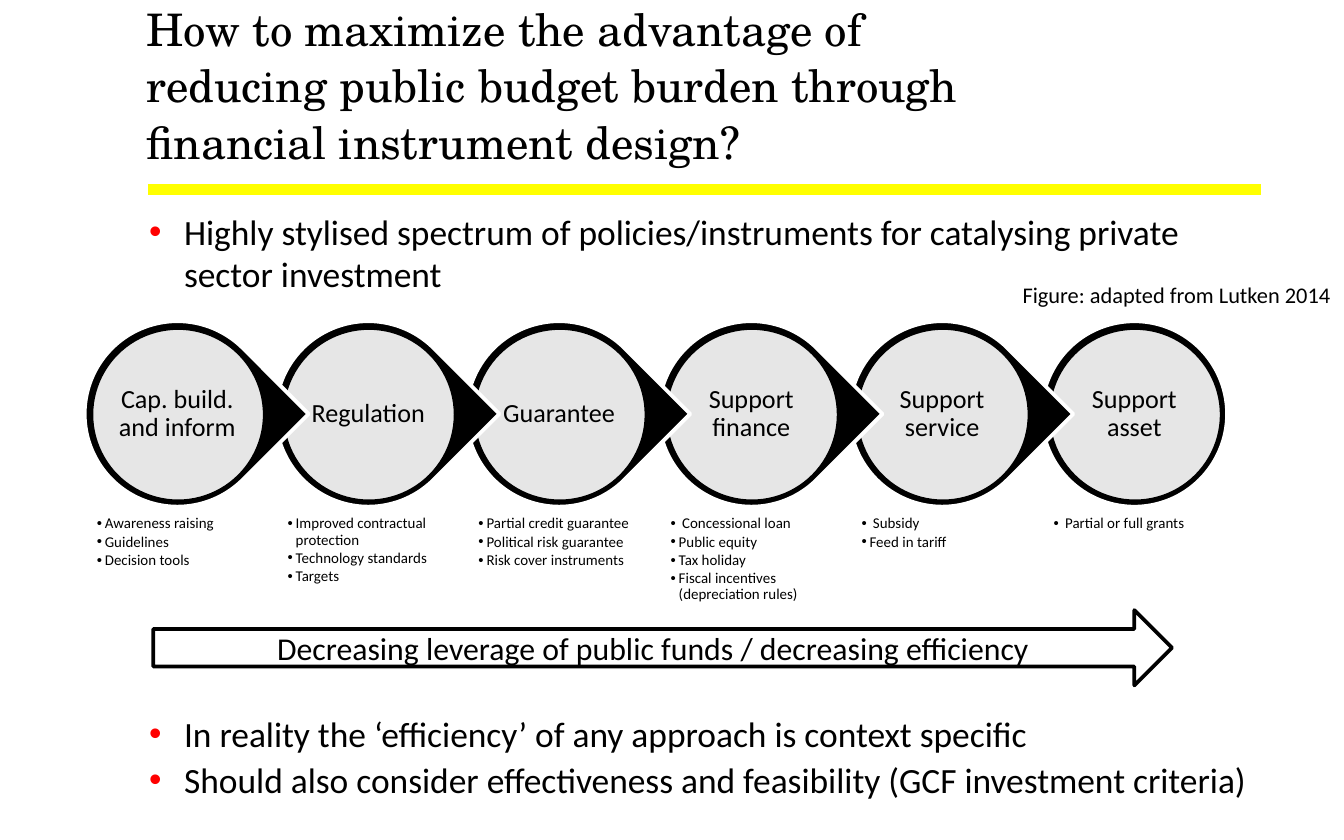
from dataclasses import dataclass

from lxml import etree
from pptx import Presentation
from pptx.dml.color import RGBColor
from pptx.enum.shapes import MSO_CONNECTOR, MSO_SHAPE
from pptx.enum.text import MSO_ANCHOR, MSO_AUTO_SIZE, PP_ALIGN
from pptx.oxml.ns import qn
from pptx.util import Pt

PX = 9144
BLANK_LAYOUT = 6
ELLIPSE, TEARDROP, RIGHT_ARROW = MSO_SHAPE.OVAL, MSO_SHAPE.TEAR, MSO_SHAPE.RIGHT_ARROW
STRAIGHT = MSO_CONNECTOR.STRAIGHT
TOP, MIDDLE, BOTTOM = MSO_ANCHOR.TOP, MSO_ANCHOR.MIDDLE, MSO_ANCHOR.BOTTOM
LEFT, CENTER, RIGHT = PP_ALIGN.LEFT, PP_ALIGN.CENTER, PP_ALIGN.RIGHT


@dataclass(frozen=True)
class Theme:
    ink: str = "000000"
    paper: str = "FFFFFF"
    rule: str = "FFFF00"
    bullet: str = "FF0000"
    heading_font: str = "TeX Gyre Schola"
    body_font: str = "Calibri"
    title: int = 24
    body: int = 19
    arrow: int = 17
    stage: int = 14
    caption: int = 12
    detail: int = 8
    outline: int = 2
    rule_width: int = 6


THEME = Theme()

STAGES = [
    ("Cap. build. and inform", ["Awareness raising", "Guidelines", "Decision tools"]),
    ("Regulation", ["Improved contractual protection", "Technology standards", "Targets"]),
    ("Guarantee", ["Partial credit guarantee", "Political risk guarantee", "Risk cover instruments"]),
    ("Support finance", [" Concessional loan", "Public equity", "Tax holiday",
                         "Fiscal incentives (depreciation rules)"]),
    ("Support service", [" Subsidy", "Feed in tariff"]),
    ("Support asset", [" Partial or full grants"]),
]


def color(value):
    return RGBColor.from_string(value)


def scaled(box):
    return [length * PX for length in box]


def write(text_frame, lines, size, font=THEME.body_font, align=LEFT, anchor=TOP,
          inset=None, line_spacing=None, space_after=None):
    text_frame.text = "\n".join(lines)
    text_frame.word_wrap = True
    text_frame.vertical_anchor = anchor
    if inset is not None:
        text_frame.margin_left = text_frame.margin_right = inset * PX
        text_frame.margin_top = text_frame.margin_bottom = inset * PX
    for paragraph in text_frame.paragraphs:
        paragraph.alignment = align
        if line_spacing:
            paragraph.line_spacing = line_spacing
        if space_after:
            paragraph.space_after = Pt(space_after)
        for run in paragraph.runs:
            run.font.size = Pt(size)
            run.font.name = font
            run.font.color.rgb = color(THEME.ink)


def add_bullets(text_frame, indent, bullet_color):
    for paragraph in text_frame.paragraphs:
        properties = paragraph._p.get_or_add_pPr()
        properties.set("marL", str(indent * PX))
        properties.set("indent", str(-indent * PX))
        tint = etree.SubElement(properties, qn("a:buClr"))
        etree.SubElement(tint, qn("a:srgbClr"), val=bullet_color)
        etree.SubElement(properties, qn("a:buFont"), typeface="Arial")
        etree.SubElement(properties, qn("a:buChar"), char="•")


def add_text(shapes, box, lines, size, **options):
    text_box = shapes.add_textbox(*scaled(box))
    write(text_box.text_frame, lines, size, **options)
    return text_box


def add_outlined(shapes, kind, box, fill, line):
    shape = shapes.add_shape(kind, *scaled(box))
    shape.shadow.inherit = False
    shape.fill.solid()
    shape.fill.fore_color.rgb = color(fill)
    shape.line.color.rgb = color(line)
    shape.line.width = Pt(THEME.outline)
    return shape


def add_title(slide, box):
    left, top, width, height = box
    add_text(slide.shapes, (left, top, 674, height),
             ["How to maximize the advantage of reducing public budget burden "
              "through financial instrument design?"],
             THEME.title, font=THEME.heading_font, anchor=BOTTOM, inset=0, line_spacing=1.05)
    rule_y = top + height + 16
    rule = slide.shapes.add_connector(
        STRAIGHT, *scaled((left + 1, rule_y, left + width, rule_y)))
    rule.line.color.rgb = color(THEME.rule)
    rule.line.width = Pt(THEME.rule_width)
    etree.SubElement(rule._element.spPr, qn("a:effectLst"))


def add_points(slide, box, lines):
    text_box = add_text(slide.shapes, box, lines, THEME.body, inset=0, space_after=1.8)
    add_bullets(text_box.text_frame, 26, THEME.bullet)


def add_stage(shapes, box, label, details, is_last):
    left, top, size, height = box
    backing = add_outlined(shapes, ELLIPSE if is_last else TEARDROP,
                           (left, top, size, size), THEME.ink, THEME.paper)
    if not is_last:
        backing.rotation = 45
    disc_size = size - 9
    disc = add_outlined(shapes, ELLIPSE, (left + 5, top + 5, disc_size, disc_size),
                        THEME.paper, THEME.ink)
    fill_color = disc._element.spPr.find(qn("a:solidFill"))[0]
    etree.SubElement(fill_color, qn("a:alpha"), val="90000")
    add_text(shapes, (left + 23, top + 23, size - 46, size - 46), [label], THEME.stage,
             align=CENTER, anchor=MIDDLE, inset=2, line_spacing=0.9)
    detail_offset = size + 3
    detail_box = add_text(shapes, (left + 5, top + detail_offset, disc_size, height - detail_offset),
                          details, THEME.detail, inset=4, line_spacing=0.9, space_after=1.2)
    add_bullets(detail_box.text_frame, 6, THEME.ink)


def add_spectrum(slide, box):
    left, top, width, height = box
    size = 138
    group = slide.shapes.add_group_shape()
    last = len(STAGES) - 1
    for index in range(last, -1, -1):
        label, details = STAGES[index]
        stage_left = left + (width - size) * index // last
        add_stage(group.shapes, (stage_left, top, size, height), label, details, index == last)


def add_caption(slide, box):
    caption = add_text(slide.shapes, box, ["Figure: adapted from Lutken 2014"],
                       THEME.caption, align=RIGHT)
    caption.text_frame.word_wrap = False
    caption.text_frame.auto_size = MSO_AUTO_SIZE.SHAPE_TO_FIT_TEXT


def add_leverage_arrow(slide, box):
    arrow = add_outlined(slide.shapes, RIGHT_ARROW, box, THEME.paper, THEME.ink)
    write(arrow.text_frame, ["Decreasing leverage of public funds / decreasing efficiency"],
          THEME.arrow, align=CENTER, anchor=MIDDLE)


def main():
    presentation = Presentation()
    presentation.slide_width, presentation.slide_height = scaled((1000, 625))
    slide = presentation.slides.add_slide(presentation.slide_layouts[BLANK_LAYOUT])
    add_title(slide, (109, 17, 829, 108))
    add_points(slide, (111, 156, 829, 70),
               ["Highly stylised spectrum of policies/instruments for catalysing "
                "private sector investment"])
    add_spectrum(slide, (63, 239, 850, 217))
    add_caption(slide, (748, 204, 252, 30))
    add_leverage_arrow(slide, (114, 454, 758, 56))
    add_points(slide, (111, 530, 829, 70),
               ["In reality the ‘efficiency’ of any approach is context specific",
                "Should also consider effectiveness and feasibility (GCF investment criteria)"])
    presentation.save("out.pptx")


if __name__ == "__main__":
    main()
